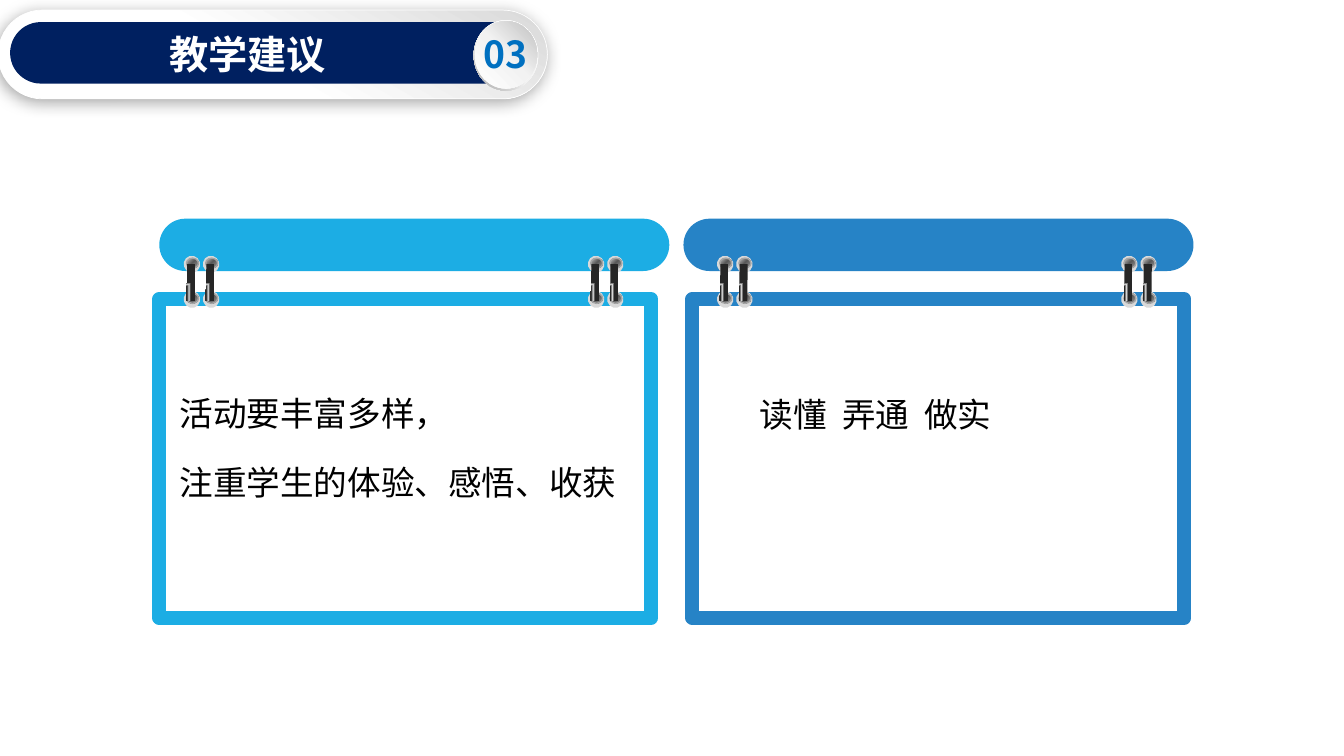
"""Build the teaching suggestions slide with two hanging note boards."""
from dataclasses import dataclass

from lxml.etree import SubElement
from pptx import Presentation
from pptx.dml.color import RGBColor
from pptx.enum.shapes import MSO_SHAPE
from pptx.enum.text import MSO_ANCHOR, PP_ALIGN
from pptx.oxml import parse_xml
from pptx.oxml.ns import nsdecls, qn
from pptx.shapes.autoshape import Shape
from pptx.slide import Slide
from pptx.text.text import TextFrame, _Paragraph
from pptx.util import Pt

BLACK = RGBColor(0x00, 0x00, 0x00)
WHITE = RGBColor(0xFF, 0xFF, 0xFF)
NAVY = RGBColor(0x00, 0x20, 0x60)
NUMBER_BLUE = RGBColor(0x00, 0x70, 0xC0)
SKY = RGBColor(0x1C, 0xAD, 0xE4)
OCEAN = RGBColor(0x26, 0x83, 0xC6)
CHARCOAL = RGBColor(0x26, 0x26, 0x26)
DARK_GREY = RGBColor(0x59, 0x59, 0x59)
GREY = RGBColor(0x80, 0x80, 0x80)
STEEL = RGBColor(0xA6, 0xA6, 0xA6)
SILVER = RGBColor(0xBF, 0xBF, 0xBF)
LIGHT = RGBColor(0xD9, 0xD9, 0xD9)
PALE = RGBColor(0xF2, 0xF2, 0xF2)

FONT_NAME = "Noto Sans CJK SC"
RING_OFFSETS = (0, 13.7, 288.7, 302.4)
HOLE_TOPS = (208, 182.9)


@dataclass(frozen=True)
class Box:
    left: float
    top: float
    width: float
    height: float


@dataclass(frozen=True)
class Gradient:
    stops: tuple[tuple[int, RGBColor], ...]
    direction: str


@dataclass(frozen=True)
class Board:
    bar_left: float
    frame_left: float
    ring_left: float
    color: RGBColor
    lines: tuple[str, ...] = ()


HOLE_GRADIENT = Gradient(
    ((20, GREY), (51, DARK_GREY), (86, STEEL)),
    '<a:path path="circle"><a:fillToRect l="100000" t="100000"/></a:path>',
)
CLIP_GRADIENT = Gradient(
    ((9, CHARCOAL), (57, LIGHT), (98, CHARCOAL)),
    '<a:path path="rect"><a:fillToRect t="100000" r="100000"/></a:path>',
)
PLATE_GRADIENT = Gradient(((45, WHITE), (100, LIGHT)), '<a:lin ang="18000000" scaled="0"/>')
RIM_GRADIENT = Gradient(
    ((0, WHITE), (55, PALE), (100, STEEL)), '<a:lin ang="8100000" scaled="0"/>'
)
BADGE_GRADIENT = Gradient(
    ((0, WHITE), (51, PALE), (100, SILVER)), '<a:lin ang="18900000" scaled="0"/>'
)
BOARDS = (
    Board(113.8, 113.8, 131, SKY, ("活动要丰富多样，", "注重学生的体验、感悟、收获")),
    Board(488.2, 494.6, 511.9, OCEAN),
)


def add_figure(
    slide: Slide,
    kind: MSO_SHAPE,
    box: Box,
    fill: RGBColor | Gradient,
    line: RGBColor | None = None,
    line_width: float = 1,
    adjustment: float | None = None,
    rotation: float = 0,
) -> Shape:
    """Add a preset shape with a solid or gradient fill."""
    shape = slide.shapes.add_shape(
        kind, Pt(box.left), Pt(box.top), Pt(box.width), Pt(box.height)
    )
    shape.shadow.inherit = False
    shape.rotation = rotation
    if adjustment is not None:
        shape.adjustments[0] = adjustment
    if isinstance(fill, Gradient):
        stops = "".join(
            f'<a:gs pos="{position * 1000}"><a:srgbClr val="{color}"/></a:gs>'
            for position, color in fill.stops
        )
        gradient = parse_xml(
            f'<a:gradFill {nsdecls("a")} rotWithShape="1">'
            f"<a:gsLst>{stops}</a:gsLst>{fill.direction}</a:gradFill>"
        )
        shape._element.spPr.find(qn("a:prstGeom")).addnext(gradient)
    else:
        shape.fill.solid()
        shape.fill.fore_color.rgb = fill
    if line is None:
        shape.line.fill.background()
    else:
        shape.line.color.rgb = line
        shape.line.width = Pt(line_width)
    return shape


def add_run(
    paragraph: _Paragraph, text: str, size: float, color: RGBColor, bold: bool = False
) -> None:
    """Add one styled run to a paragraph."""
    run = paragraph.add_run()
    run.text = text
    run.font.size = Pt(size)
    run.font.bold = bold
    run.font.color.rgb = color
    run.font.name = FONT_NAME
    SubElement(run._r.get_or_add_rPr(), qn("a:ea"), typeface=FONT_NAME)


def set_margins(
    frame: TextFrame, left: float, top: float, right: float, bottom: float
) -> None:
    """Set the four insets of a text frame."""
    frame.margin_left, frame.margin_top = Pt(left), Pt(top)
    frame.margin_right, frame.margin_bottom = Pt(right), Pt(bottom)


def add_text_box(slide: Slide, box: Box) -> TextFrame:
    """Add a wrapping text box and return its frame."""
    shape = slide.shapes.add_textbox(
        Pt(box.left), Pt(box.top), Pt(box.width), Pt(box.height)
    )
    shape.text_frame.word_wrap = True
    return shape.text_frame


def add_ring(slide: Slide, left: float) -> None:
    """Draw one binder ring with its two holes and its clip."""
    for top in HOLE_TOPS:
        add_figure(slide, MSO_SHAPE.OVAL, Box(left, top, 12.2, 11.7), LIGHT, rotation=74.3)
    for top in HOLE_TOPS:
        hole = Box(left + 2.9, top + 0.8, 7.2, 8.6)
        add_figure(slide, MSO_SHAPE.OVAL, hole, HOLE_GRADIENT, STEEL, rotation=90.7)
    clip = Box(left - 7.9, 198.7, 26.6, 5.8)
    add_figure(slide, MSO_SHAPE.RECTANGLE, clip, CLIP_GRADIENT, rotation=90.7)


def add_board(slide: Slide, board: Board) -> None:
    """Draw a bar, the framed board below it and the rings that join them."""
    bar = Box(board.bar_left, 156.2, 364.3, 37.4)
    add_figure(slide, MSO_SHAPE.ROUNDED_RECTANGLE, bar, board.color, adjustment=0.5)
    panel = Box(board.frame_left, 213.8, 351.4, 227.5)
    shape = add_figure(slide, MSO_SHAPE.RECTANGLE, panel, WHITE, board.color, 10)
    frame = shape.text_frame
    frame.word_wrap = True
    frame.vertical_anchor = MSO_ANCHOR.MIDDLE
    set_margins(frame, 14.4, 7.2, 14.4, 31)
    for index, line in enumerate(board.lines):
        paragraph = frame.add_paragraph() if index else frame.paragraphs[0]
        paragraph.alignment = PP_ALIGN.JUSTIFY
        paragraph.line_spacing = 1.3
        if index:
            paragraph.space_before = Pt(12)
        add_run(paragraph, line, 24, BLACK)
    for offset in RING_OFFSETS:
        add_ring(slide, board.ring_left + offset)


def add_motto(slide: Slide) -> None:
    """Write the three tab-aligned words on the right board."""
    frame = add_text_box(slide, Box(514.1, 263.5, 301, 51.1))
    frame.margin_left = Pt(28.7)
    paragraph = frame.paragraphs[0]
    paragraph.line_spacing = 1.5
    tabs = SubElement(paragraph._p.get_or_add_pPr(), qn("a:tabLst"))
    for position in (58.75, 117.5):
        SubElement(tabs, qn("a:tab"), pos=str(int(Pt(position))), algn="l")
    add_run(paragraph, "读懂\t弄通\t做实", 24, BLACK)


def add_heading(slide: Slide) -> None:
    """Draw the heading plate with its title and number badge."""
    rounded = MSO_SHAPE.ROUNDED_RECTANGLE
    plate = add_figure(
        slide, rounded, Box(-1.4, 7.2, 392.4, 63.4), PLATE_GRADIENT, WHITE, 0.5, 0.5
    )
    shadow = parse_xml(
        f'<a:outerShdw {nsdecls("a")} blurRad="{Pt(12)}" dist="{Pt(3)}" dir="8100000">'
        f'<a:srgbClr val="{BLACK}"><a:alpha val="34000"/></a:srgbClr></a:outerShdw>'
    )
    plate._element.spPr.find(qn("a:effectLst")).append(shadow)
    add_figure(slide, rounded, Box(7.2, 15.8, 373.7, 43.9), NAVY, adjustment=0.5)
    title = add_text_box(slide, Box(113.8, 18, 133.9, 41))
    add_run(title.paragraphs[0], "教学建议", 28, WHITE, True)
    add_figure(
        slide, MSO_SHAPE.DONUT, Box(338.4, 14.4, 46.1, 50.4), RIM_GRADIENT, adjustment=0.05
    )
    add_figure(slide, MSO_SHAPE.OVAL, Box(339.1, 15.1, 44.6, 48.2), BADGE_GRADIENT)
    number = add_text_box(slide, Box(342.7, 22.3, 37.4, 32.4))
    set_margins(number, 0, 0, 0, 0)
    number.paragraphs[0].alignment = PP_ALIGN.CENTER
    add_run(number.paragraphs[0], "03", 26.6, NUMBER_BLUE, True)


def main() -> None:
    """Assemble and save the slide."""
    presentation = Presentation()
    presentation.slide_width, presentation.slide_height = Pt(960), Pt(540)
    slide = presentation.slides.add_slide(presentation.slide_layouts[6])
    for board in BOARDS:
        add_board(slide, board)
    add_motto(slide)
    add_heading(slide)
    presentation.save("out.pptx")


if __name__ == "__main__":
    main()
